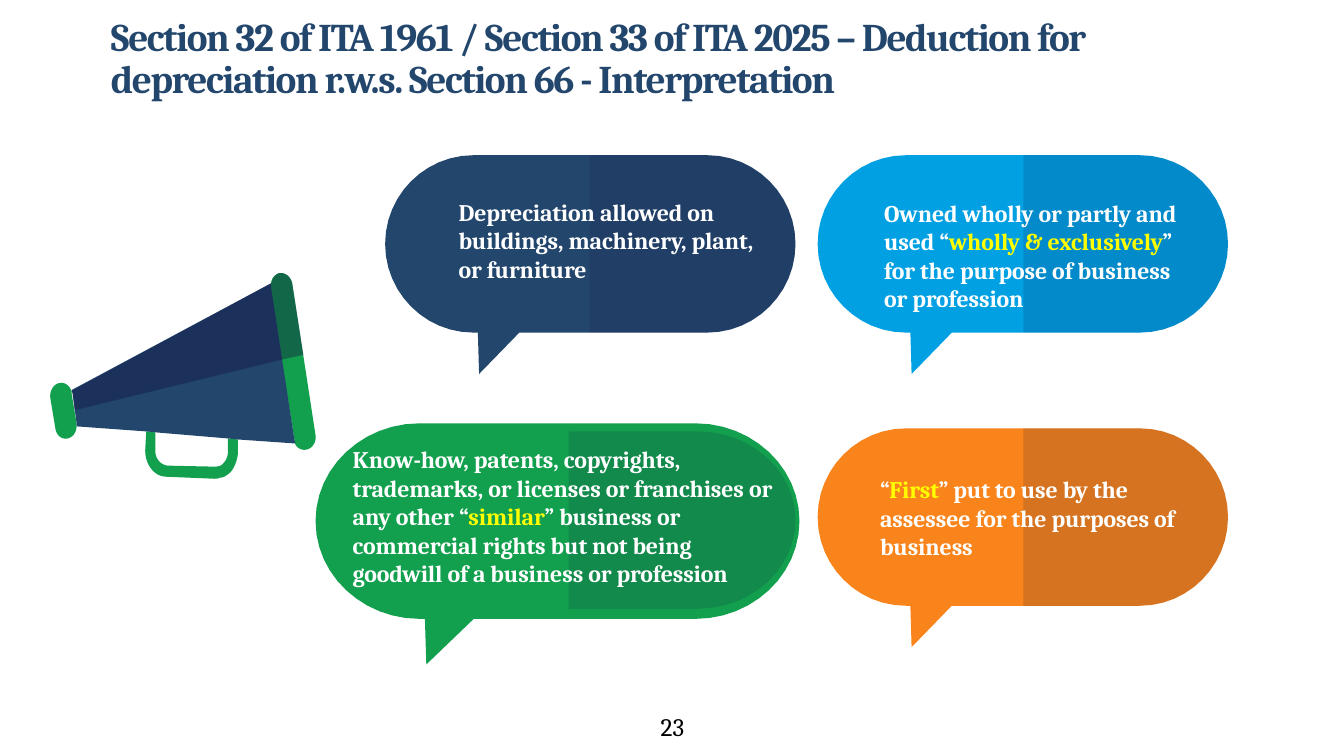
import lxml.etree
import pptx
import pptx.dml.color
import pptx.enum.text
import pptx.oxml.ns
import pptx.util

EMU_PER_PX = 9144  # 100 px to the inch
COLORS = {
    "navy": "23466D", "blue": "00A0E3", "green": "13A04E", "orange": "F9841B",
    "shade": "111340", "white": "FFFFFF", "yellow": "FFFF00", "black": "000000",
}
ROUNDNESS = 0.55  # Bezier handle length for a quarter ellipse
CURVE_STEPS = 12


def px(length):
    return pptx.util.Emu(round(length * EMU_PER_PX))


def rgb(color):
    return pptx.dml.color.RGBColor.from_string(COLORS[color])


def curve_points(start, control_1, control_2, end):
    """Sample a cubic Bezier curve, leaving out its start."""
    for step in range(1, CURVE_STEPS + 1):
        t = step / CURVE_STEPS
        u = 1 - t
        yield tuple(
            u**3 * a + 3 * u**2 * t * b + 3 * u * t**2 * c + t**3 * d
            for a, b, c, d in zip(start, control_1, control_2, end)
        )


def flatten(outline):
    """Turn (x, y) corners and (x1, y1, x2, y2, x, y) curves into points."""
    points = [outline[0]]
    for step in outline[1:]:
        if len(step) == 2:
            points.append(step)
        else:
            points.extend(curve_points(points[-1], step[:2], step[2:4], step[4:]))
    return points


def right_cap(right, top, radius, height):
    """Half ellipse from the bottom edge round to the top edge."""
    middle, bottom = top + height / 2, top + height
    near_x = right - radius * (1 - ROUNDNESS)
    near_y = height / 2 * ROUNDNESS
    return [
        (right - radius, bottom),
        (near_x, bottom, right, middle + near_y, right, middle),
        (right, middle - near_y, near_x, top, right - radius, top),
    ]


class SlideBuilder:
    def __init__(self, presentation, font):
        self.slide = presentation.slides.add_slide(presentation.slide_layouts[5])
        self.font = font

    def outline(self, steps, color, alpha=100):
        points = [(px(x), px(y)) for x, y in flatten(steps)]
        builder = self.slide.shapes.build_freeform(*points[0])
        builder.add_line_segments(points[1:], close=True)
        shape = builder.convert_to_shape()
        shape.shadow.inherit = False
        shape.line.fill.background()
        shape.fill.solid()
        shape.fill.fore_color.rgb = rgb(color)
        if alpha < 100:
            qn = pptx.oxml.ns.qn
            fill_color = shape._element.spPr.find(f"{qn('a:solidFill')}/{qn('a:srgbClr')}")
            lxml.etree.SubElement(fill_color, qn("a:alpha"), val=str(alpha * 1000))

    def bubble(self, left, top, width, height, color):
        radius = 0.215 * width
        middle, bottom = top + height / 2, top + height
        near_x = left + radius * (1 - ROUNDNESS)
        near_y = height / 2 * ROUNDNESS
        self.outline([
            (left + radius, top),
            (near_x, top, left, middle - near_y, left, middle),
            (left, middle + near_y, near_x, bottom, left + radius, bottom),
            (left + 0.226 * width, bottom),
            (left + 0.229 * width, bottom + 0.233 * height),
            (left + 0.327 * width, bottom),
            *right_cap(left + width, top, radius, height),
        ], color)

    def bubble_shade(self, left, top, width, height):
        cap = right_cap(left + width, top, 0.43 * width, height)
        self.outline([(left, top), (left, top + height), *cap], "shade", 15)

    def fill_text(self, frame, text, size, color, anchor, align="LEFT", bold=True, spacing=0):
        """Fill a frame; words between asterisks turn yellow."""
        frame.word_wrap = True
        frame.auto_size = pptx.enum.text.MSO_AUTO_SIZE.NONE
        frame.vertical_anchor = pptx.enum.text.MSO_ANCHOR[anchor]
        paragraph = frame.paragraphs[0]
        paragraph.alignment = pptx.enum.text.PP_ALIGN[align]
        paragraph.font.name = self.font
        paragraph.font.size = pptx.util.Pt(size)
        paragraph.font.bold = bold
        paragraph.font.color.rgb = rgb(color)
        for index, piece in enumerate(text.split("*")):
            run = paragraph.add_run()
            run.text = piece
            if spacing:
                run._r.get_or_add_rPr().set("spc", str(spacing))
            if index % 2:
                run.font.color.rgb = rgb("yellow")
        return paragraph

    def title(self, text, left, top, width, height):
        heading = self.slide.shapes.title
        heading.left, heading.top = px(left), px(top)
        heading.width, heading.height = px(width), px(height)
        heading.text_frame.margin_left = px(11)
        paragraph = self.fill_text(heading.text_frame, text, 28, "navy", "MIDDLE", spacing=-100)
        paragraph.line_spacing = 0.9

    def textbox(self, text, left, top, width, height, size=17, color="white",
                anchor="BOTTOM", **style):
        box = self.slide.shapes.add_textbox(px(left), px(top), px(width), px(height))
        self.fill_text(box.text_frame, text, size, color, anchor, **style)


BUBBLES = [
    # bubble, shade, text box, colour, text
    ((382, 154, 407, 176), (585, 154, 204, 176), (445, 190, 316, 96), "navy",
     "Depreciation allowed on buildings, machinery, plant, or furniture"),
    ((811, 154, 407, 176), (1015, 154, 203, 176), (867, 162, 327, 153), "blue",
     "Owned wholly or partly and used “*wholly & exclusively*” for the purpose "
     "of business or profession"),
    ((313, 420, 480, 194), (564, 428, 225, 176), (340, 435, 439, 153), "green",
     "Know-how, patents, copyrights, trademarks, or licenses or franchises or any other "
     "“*similar*” business or commercial rights but not being goodwill of a business "
     "or profession"),
    ((811, 425, 407, 176), (1015, 425, 203, 176), (863, 465, 327, 96), "orange",
     "“*First*” put to use by the assessee for the purposes of business"),
]

MEGAPHONE = {
    "mouthpiece": ([
        (71, 390), (71, 388), (69, 382, 64, 379, 59, 380), (53, 381, 49, 388, 50, 395),
        (55, 425), (56, 432, 61, 436, 67, 435), (72, 434, 76, 429, 76, 423), (76, 420),
    ], "green", 100),
    "rim": ([
        (277, 271), (273, 272, 269, 276, 269, 281), (268, 286), (292, 436),
        (292, 438, 292, 439, 293, 441), (295, 445, 300, 447, 304, 446),
        (310, 445, 314, 438, 313, 432), (290, 282), (289, 275, 283, 270, 277, 271),
    ], "green", 100),
    "handle": ([
        (226, 449), (226, 453, 224, 457, 222, 459), (220, 462, 217, 463, 213, 463),
        (166, 462), (159, 461, 154, 455, 154, 447), (154, 429), (145, 428), (144, 447),
        (144, 461, 153, 473, 165, 473), (213, 475), (215, 475, 216, 475, 218, 474),
        (222, 474, 226, 471, 229, 468), (233, 463, 235, 457, 236, 450),
        (236, 436), (226, 435),
    ], "green", 100),
    "horn": ([
        (269, 286), (269, 281), (71, 387), (72, 390), (76, 420), (76, 423), (145, 428),
        (155, 429), (226, 435), (236, 436), (293, 440), (292, 436),
    ], "navy", 100),
    "horn shade": ([
        (290, 282), (289, 275, 283, 270, 277, 271), (273, 272, 270, 277, 269, 281),
        (71, 388), (72, 390), (74, 407), (279, 357), (301, 352),
    ], "shade", 40),
}


def main():
    presentation = pptx.Presentation()
    presentation.slide_width, presentation.slide_height = px(1333), px(750)
    builder = SlideBuilder(presentation, "Cambria")
    builder.title(
        "Section 32 of ITA 1961 / Section 33 of ITA 2025 – Deduction for depreciation "
        "r.w.s. Section 66 - Interpretation", 99, 17, 1150, 85)
    for bubble, shade, text_area, color, text in BUBBLES:
        builder.bubble(*bubble, color)
        builder.bubble_shade(*shade)
        builder.textbox(text, *text_area, spacing=-10)
    for steps, color, alpha in MEGAPHONE.values():
        builder.outline(steps, color, alpha)
    builder.textbox("23", 517, 701, 300, 40, size=18, color="black", anchor="TOP",
                    align="CENTER", bold=False)
    presentation.save("out.pptx")


if __name__ == "__main__":
    main()
